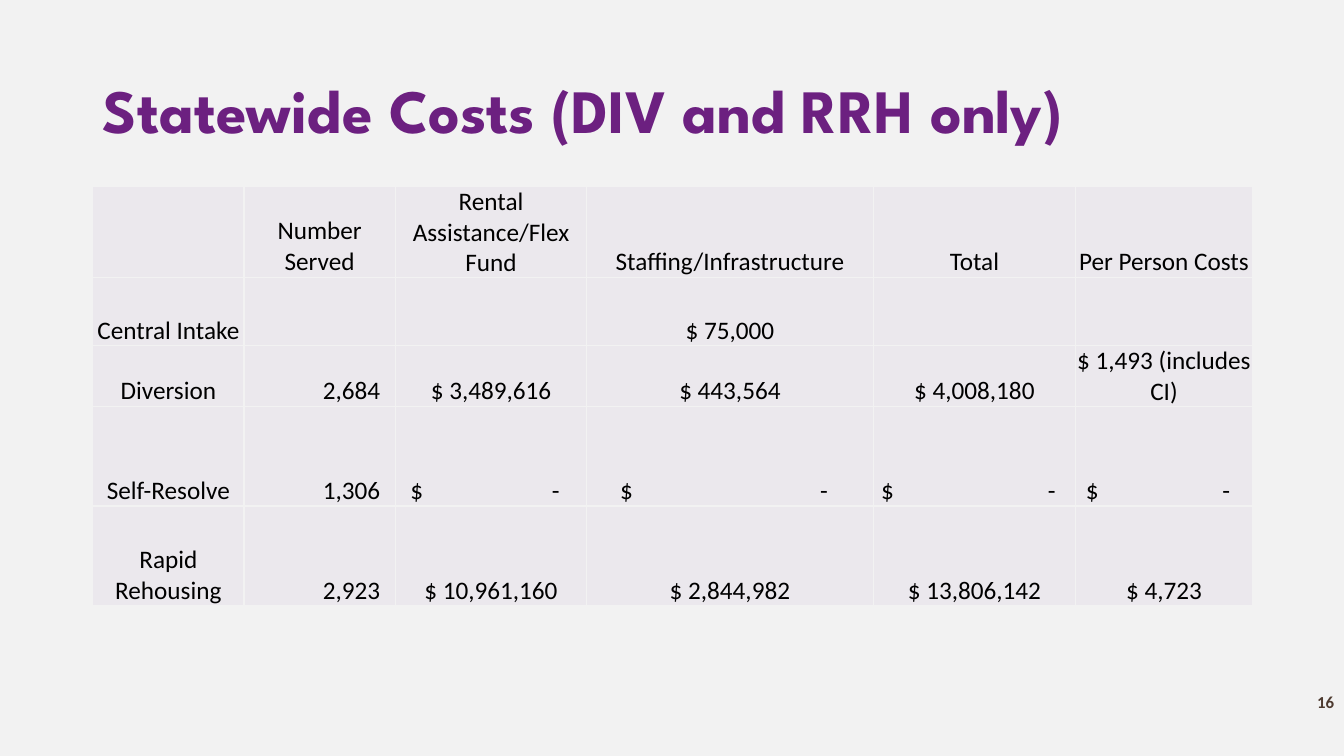
import pptx
import pptx.util
import pptx.dml.color
import pptx.enum.text
from dataclasses import dataclass
from lxml import etree

Inches, Pt = pptx.util.Inches, pptx.util.Pt
Align = pptx.enum.text.PP_ALIGN
Anchor = pptx.enum.text.MSO_ANCHOR


@dataclass(frozen=True)
class Theme:
    back: str = "F2F2F2"
    cell: str = "EBE8ED"
    title: str = "6C2080"
    body: str = "000000"
    foot: str = "4E3B30"
    head_font: str = "League Spartan"
    font: str = "Calibri"
    head_size: int = 44
    size: int = 18
    foot_size: int = 12


THEME = Theme()
TITLE = "Statewide Costs (DIV and RRH only)"
NUMBER = "16"
NIL = "$\t-"
ROWS = [
    ["", "Number Served", "Rental Assistance/Flex Fund", "Staffing/Infrastructure",
     "Total", "Per Person Costs"],
    ["Central Intake", "", "", "$ 75,000", "", ""],
    ["Diversion", "2,684", "$ 3,489,616", "$ 443,564", "$ 4,008,180",
     "$ 1,493 (includes CI)"],
    ["Self-Resolve", "1,306", NIL, NIL, NIL, NIL],
    ["Rapid Rehousing", "2,923", "$ 10,961,160", "$ 2,844,982", "$ 13,806,142", "$ 4,723"],
]
WIDTHS = [1.5, 1.5, 1.9, 2.84, 2.01, 1.75]
HEIGHTS = [0.68, 0.68, 0.49, 0.99, 0.99]
PADS = [0, 0.15, 0.15, 0.33, 0.08, 0.1]  # side gaps of counts and nil amounts
DASH = 0.12  # extra gap to the right of a nil dash

WIDE, HIGH = 13.33, 7.5
LEFT, SPAN = 0.92, 11.5
TOP, DEEP = 1.85, 4.16


def color(code):
    return pptx.dml.color.RGBColor.from_string(code)


def write(para, text, font, size, shade, bold=False):
    run = para.add_run()
    run.text = text
    run.font.name, run.font.size, run.font.bold = font, Pt(size), bold
    run.font.color.rgb = color(shade)


def add_box(slide, place, anchor):
    """Add a wrapping text box and return its first paragraph."""
    frame = slide.shapes.add_textbox(*map(Inches, place)).text_frame
    frame.word_wrap, frame.vertical_anchor = True, anchor
    return frame.paragraphs[0]


def add_node(parent, tag, **attrs):
    return etree.SubElement(parent, pptx.oxml.ns.qn(tag), attrs)


def style_cell(cell):
    cell.margin_left = cell.margin_right = cell.margin_top = cell.margin_bottom = 0
    cell.vertical_anchor = Anchor.BOTTOM
    props = cell._tc.get_or_add_tcPr()
    for side in "LRTB":
        line = add_node(props, f"a:ln{side}", w=str(Pt(1)))
        add_node(add_node(line, "a:solidFill"), "a:srgbClr", val=THEME.back)
    cell.fill.solid()
    cell.fill.fore_color.rgb = color(THEME.cell)


def fill_cell(cell, text, row, col):
    para = cell.text_frame.paragraphs[0]
    pad = PADS[col]
    para.alignment = Align.CENTER
    if text == NIL:
        para.alignment = Align.LEFT
        cell.margin_left = Inches(pad)
        tabs = add_node(para._p.get_or_add_pPr(), "a:tabLst")
        stop = Inches(WIDTHS[col] - 2 * pad - DASH)
        add_node(tabs, "a:tab", pos=str(stop), algn="r")
    elif row and col == 1:
        para.alignment = Align.RIGHT
        cell.margin_right = Inches(pad)
    write(para, text, THEME.font, THEME.size, THEME.body)


def add_costs(slide):
    frame = slide.shapes.add_table(len(ROWS), len(WIDTHS),
                                   *map(Inches, (LEFT, TOP, SPAN, DEEP)))
    table = frame.table
    table.first_row = table.horz_banding = False
    for col, width in zip(table.columns, WIDTHS):
        col.width = Inches(width)
    for row, height in zip(table.rows, HEIGHTS):
        row.height = Inches(height)
    frame.height = Inches(DEEP)
    for r, texts in enumerate(ROWS):
        for c, text in enumerate(texts):
            cell = table.cell(r, c)
            style_cell(cell)
            if text:
                fill_cell(cell, text, r, c)


def main():
    deck = pptx.Presentation()
    deck.slide_width, deck.slide_height = Inches(WIDE), Inches(HIGH)
    slide = deck.slides.add_slide(deck.slide_layouts[6])
    slide.background.fill.solid()
    slide.background.fill.fore_color.rgb = color(THEME.back)

    head = add_box(slide, (LEFT, 0.4, SPAN, TOP - 0.4), Anchor.MIDDLE)
    head.line_spacing = 0.9
    write(head, TITLE, THEME.head_font, THEME.head_size, THEME.title, True)

    add_costs(slide)

    foot = add_box(slide, (WIDE - 1.87, 6.81, 1.87, 0.4), Anchor.TOP)
    foot.alignment = Align.RIGHT
    write(foot, NUMBER, THEME.font, THEME.foot_size, THEME.foot, True)
    deck.save("out.pptx")


if __name__ == "__main__":
    main()
